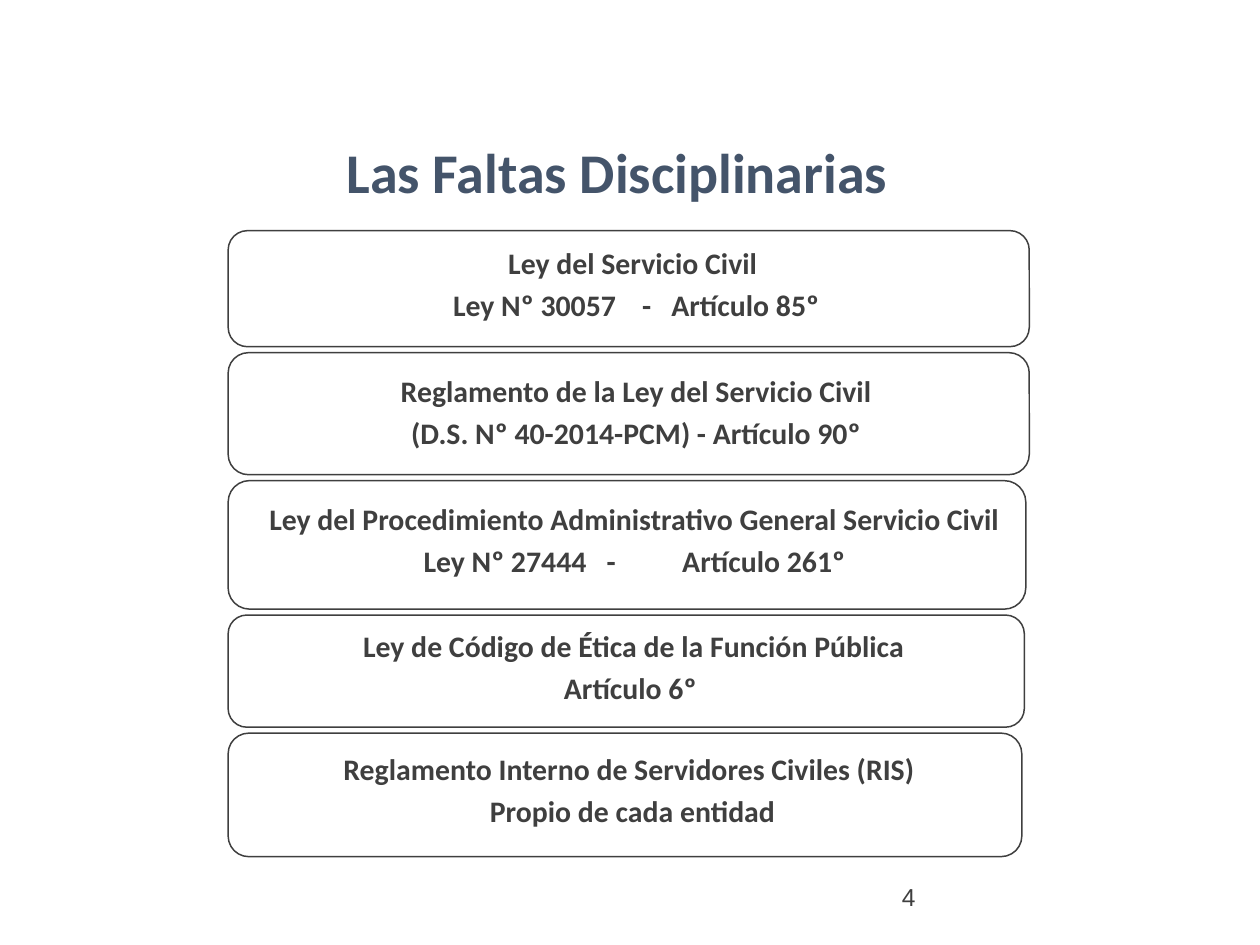
from pptx import Presentation
from pptx.dml.color import RGBColor as Rgb
from pptx.enum.shapes import MSO_SHAPE as Geo
from pptx.enum.text import MSO_ANCHOR as Anchor, PP_ALIGN as Align
from pptx.util import Cm, Pt

COLORS = {"title": "44546A", "ink": "3F3F3F", "paper": "FFFFFF"}
LEFT, TOP, GAP, INSET = 4.6, 4.65, 0.12, 0.3
LAWS = [
    (16.15, 2.34, 1.98, ["Ley del Servicio Civil ", "Ley Nº 30057 \t-   Artículo 85º"]),
    (16.15, 2.46, 2.21, ["Reglamento de la Ley del Servicio Civil",
                         "(D.S. Nº 40-2014-PCM) - Artículo 90º"]),
    (16.08, 2.59, 2.21, ["Ley del Procedimiento Administrativo General Servicio Civil",
                         "Ley Nº 27444   -\t Artículo 261º"]),
    (16.05, 2.26, 1.93, ["Ley de Código de Ética de la Función Pública", "Artículo 6º "]),
    (16.0, 2.49, 2.11, ["Reglamento Interno de Servidores Civiles (RIS) ",
                        "Propio de cada entidad"]),
]


def color(name):
    return Rgb.from_string(COLORS[name])


def add_run(para, text, size, tone, face="Calibri", bold=True):
    run = para.add_run()
    run.text = text
    font = run.font
    font.name, font.size, font.bold = face, Pt(size), bold
    font.color.rgb = color(tone)


def add_frame(shapes, left, top, width, height, anchor=Anchor.MIDDLE):
    frame = shapes.add_textbox(Cm(left), Cm(top), Cm(width), Cm(height)).text_frame
    frame.word_wrap = True
    frame.vertical_anchor = anchor
    return frame


def add_title(slide, text):
    para = add_frame(slide.shapes, 1.75, 2.74, 21.39, 1.4).paragraphs[0]
    para.alignment = Align.CENTER
    add_run(para, text, 32, "title")


def add_number(slide, text):
    frame = add_frame(slide.shapes, 17.93, 17.65, 5.72, 1.02, Anchor.TOP)
    add_run(frame.paragraphs[0], text, 14, "ink", "Arial", False)


def add_law(slide, top, width, height, depth, lines):
    group = slide.shapes.add_group_shape().shapes
    box = group.add_shape(Geo.ROUNDED_RECTANGLE, Cm(LEFT), Cm(top), Cm(width), Cm(height))
    box.shadow.inherit = False
    box.fill.solid()
    box.fill.fore_color.rgb = color("paper")
    box.line.color.rgb = color("ink")
    box.line.width = Pt(0.85)

    frame = add_frame(group, LEFT + INSET, top + GAP, width - INSET, depth)
    frame.margin_left = frame.margin_right = Cm(0.13)
    frame.margin_top = frame.margin_bottom = Cm(0.13)
    for index, line in enumerate(lines):
        para = frame.add_paragraph() if index else frame.paragraphs[0]
        para.alignment = Align.CENTER
        para.line_spacing = 0.9
        para.space_after = Pt(5.6)
        add_run(para, line, 17, "ink")


def main():
    deck = Presentation()
    deck.slide_width, deck.slide_height = Cm(25.4), Cm(19.05)
    slide = deck.slides.add_slide(deck.slide_layouts[6])
    add_number(slide, "4")
    add_title(slide, "Las Faltas Disciplinarias")
    top = TOP
    for width, height, depth, lines in LAWS:
        add_law(slide, top, width, height, depth, lines)
        top += height + GAP
    deck.save("out.pptx")


if __name__ == "__main__":
    main()
